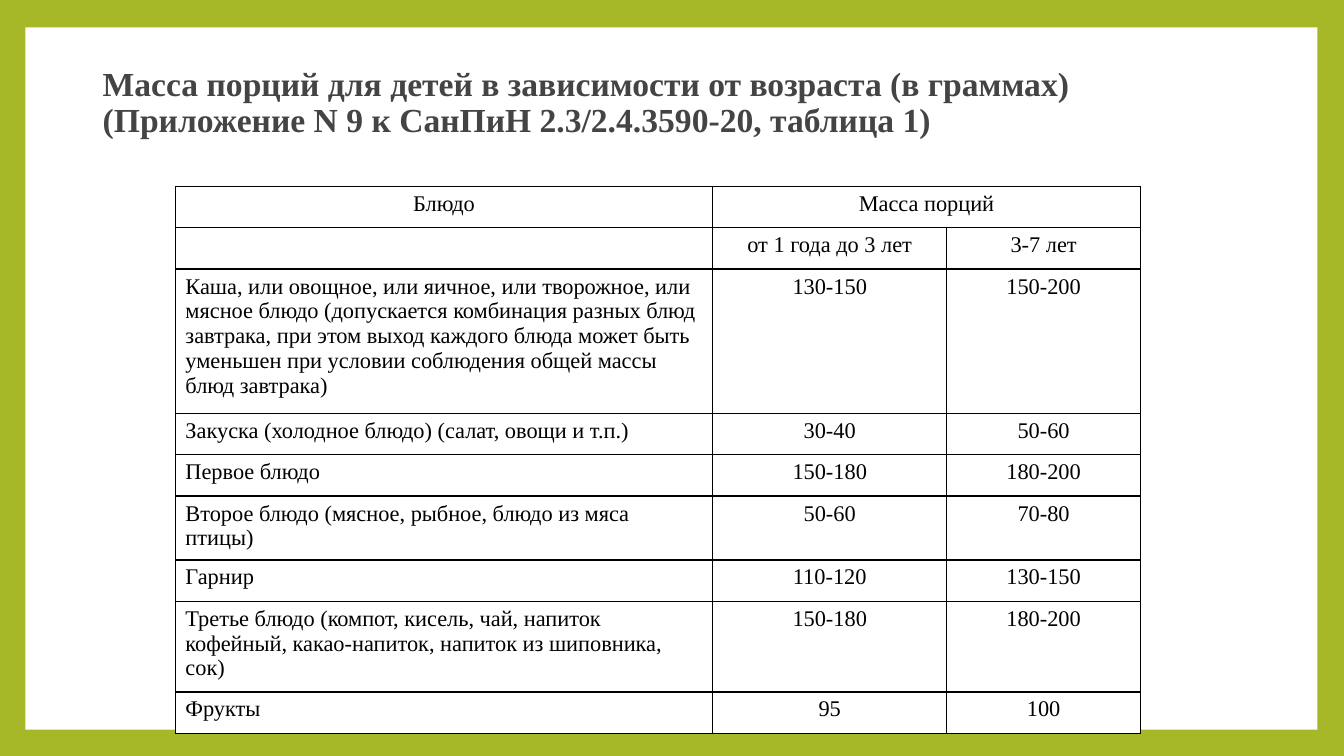
from lxml.etree import SubElement
from pptx import Presentation
from pptx.dml.color import RGBColor
from pptx.enum.shapes import MSO_SHAPE as Shape
from pptx.enum.text import MSO_ANCHOR as Anchor, PP_ALIGN as Align
from pptx.oxml.ns import qn
from pptx.util import Cm, Pt

PORTIONS = [
    ("Блюдо", "Масса порций", ""),
    ("", "от 1 года до 3 лет", "3-7 лет"),
    ("Каша, или овощное, или яичное, или творожное, или мясное блюдо "
     "(допускается комбинация разных блюд завтрака, при этом выход каждого "
     "блюда может быть уменьшен при условии соблюдения общей массы блюд завтрака)",
     "130-150", "150-200"),
    ("Закуска (холодное блюдо) (салат, овощи и т.п.)", "30-40", "50-60"),
    ("Первое блюдо", "150-180", "180-200"),
    ("Второе блюдо (мясное, рыбное, блюдо из мяса птицы)", "50-60", "70-80"),
    ("Гарнир", "110-120", "130-150"),
    ("Третье блюдо (компот, кисель, чай, напиток кофейный, какао-напиток, "
     "напиток из шиповника, сок)", "150-180", "180-200"),
    ("Фрукты", "95", "100"),
]


def rgb(value):
    return RGBColor.from_string(value)


class PortionSlide:
    FONT = "Times New Roman"
    GREEN, WHITE, GREY, BLACK = "A6B727", "FFFFFF", "444444", "000000"

    def __init__(self, deck):
        self.slide = deck.slides.add_slide(deck.slide_layouts[6])
        self.paint(self.slide.background.fill, self.GREEN)

    def paint(self, fill, colour):
        fill.solid()
        fill.fore_color.rgb = rgb(colour)

    def set_text(self, paragraph, text, colour, **font_format):
        paragraph.text = text
        font = paragraph.runs[0].font if text else paragraph.font
        for name, value in {"name": self.FONT, **font_format}.items():
            setattr(font, name, value)
        font.color.rgb = rgb(colour)

    def panel(self, left, top, width, height):
        sheet = self.slide.shapes.add_shape(
            Shape.RECTANGLE, Cm(left), Cm(top), Cm(width), Cm(height))
        sheet.shadow.inherit = False
        self.paint(sheet.fill, self.WHITE)
        sheet.line.fill.background()

    def title(self, text, left, top, width, height):
        heading = self.slide.shapes.add_textbox(
            Cm(left), Cm(top), Cm(width), Cm(height)).text_frame
        heading.word_wrap = True
        heading.vertical_anchor = Anchor.MIDDLE
        heading.paragraphs[0].line_spacing = 0.9
        self.set_text(heading.paragraphs[0], text, self.GREY, size=Pt(24), bold=True)

    def border(self, cell):
        properties = cell._tc.get_or_add_tcPr()
        for position, side in enumerate(("a:lnL", "a:lnR", "a:lnT", "a:lnB")):
            edge = SubElement(properties, qn(side), w=str(Pt(1)))
            ink = SubElement(edge, qn("a:solidFill"))
            SubElement(ink, qn("a:srgbClr"), val=self.BLACK)
            properties.insert(position, edge)

    def table(self, rows, left, top, column_widths, row_height):
        grid = self.slide.shapes.add_table(
            len(rows), len(column_widths), Cm(left), Cm(top),
            Cm(sum(column_widths)), Cm(row_height * len(rows))).table
        for column, width in zip(grid.columns, column_widths):
            column.width = Cm(width)
        for r, row in enumerate(rows):
            grid.rows[r].height = Cm(row_height)
            for c, text in enumerate(row):
                cell = grid.cell(r, c)
                self.paint(cell.fill, self.WHITE)
                self.border(cell)
                paragraph = cell.text_frame.paragraphs[0]
                self.set_text(paragraph, text, self.BLACK, size=Pt(16), bold=False)
                # Dish names run from the left, headings and weights are centred
                is_dish = c == 0 and r > 1
                paragraph.alignment = Align.LEFT if is_dish else Align.CENTER
        return grid


def main():
    deck = Presentation()
    deck.slide_width, deck.slide_height = Cm(33.87), Cm(19.05)
    page = PortionSlide(deck)

    # White sheet inside the green frame
    page.panel(0.64, 0.69, 32.56, 17.7)

    # Heading
    page.title("Масса порций для детей в зависимости от возраста (в граммах) "
               "(Приложение N 9 к СанПиН 2.3/2.4.3590-20, таблица 1)",
               2.34, 1.02, 29.21, 3.18)

    # Portion weights by age
    weights = page.table(PORTIONS, 4.42, 4.7, (13.54, 5.9, 4.88), 1.04)
    weights.cell(0, 1).merge(weights.cell(0, 2))

    deck.save("out.pptx")


if __name__ == "__main__":
    main()
